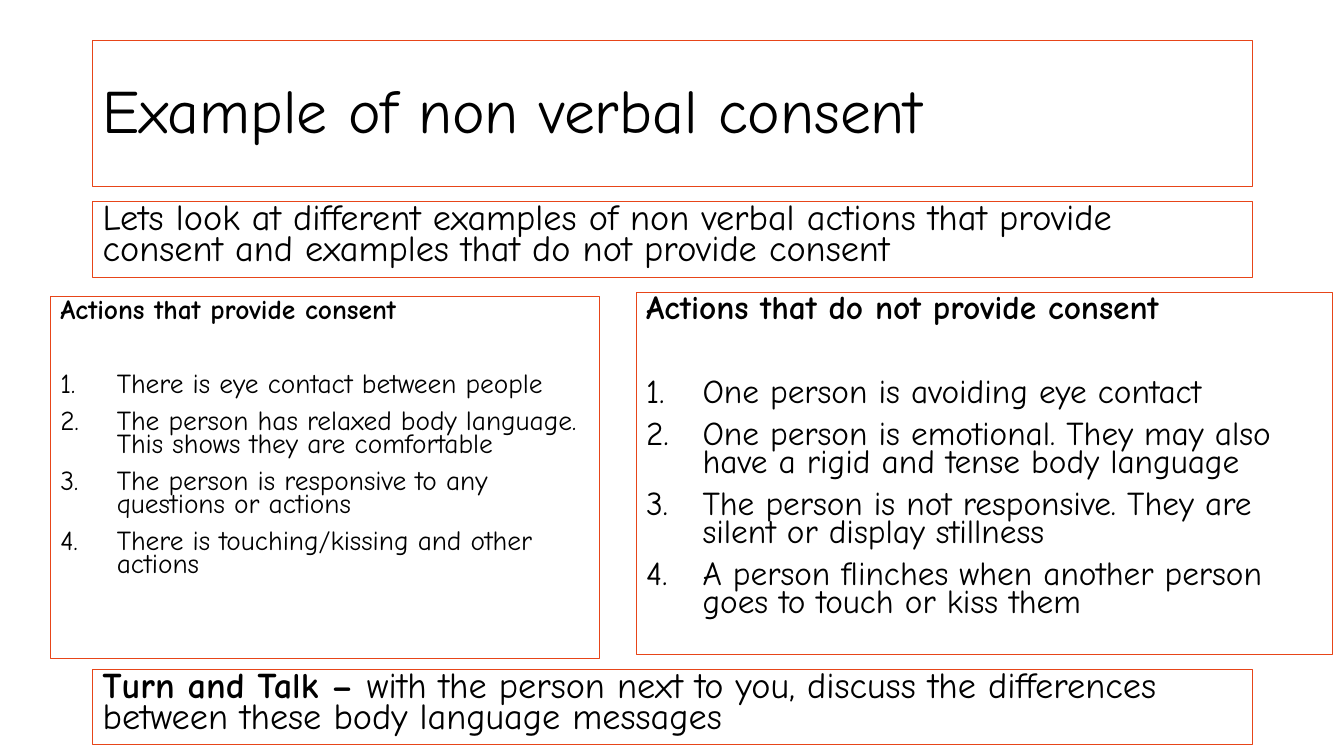
from pptx import Presentation
from pptx.dml.color import RGBColor
from pptx.enum.shapes import MSO_SHAPE as Shape
from pptx.enum.text import MSO_ANCHOR as Anchor, PP_ALIGN as Align
from pptx.util import Inches, Pt
from lxml import etree

FONT = "Comic Neue"
INK, EDGE = "000000", "E74519"
LEFT, WIDTH = 0.92, 11.5
GAP = 10
A = "{http://schemas.openxmlformats.org/drawingml/2006/main}"


def color(code):
    return RGBColor.from_string(code)


def frame(slide, box, anchor=Anchor.TOP):
    """Draw an outlined box and return its text frame."""
    shape = slide.shapes.add_shape(Shape.RECTANGLE, *map(Inches, box))
    shape.shadow.inherit = False
    shape.fill.background()
    shape.line.color.rgb = color(EDGE)
    shape.line.width = Pt(0.75)
    text = shape.text_frame
    text.word_wrap = True
    text.vertical_anchor = anchor
    return text


def write(para, runs, size, before=GAP, space=0.7):
    """Fill a paragraph with (words, bold) runs."""
    para.alignment = Align.LEFT
    para.line_spacing = space
    para.space_before = Pt(before)
    for words, bold in runs:
        run = para.add_run()
        run.text = words
        run.font.name = FONT
        run.font.size = Pt(size)
        run.font.bold = bold
        run.font.color.rgb = color(INK)


def number(para):
    """Turn a paragraph into a numbered item with a hanging indent."""
    props = para._p.get_or_add_pPr()
    indent = Inches(0.56)
    props.set("marL", str(indent))
    props.set("indent", str(-indent))
    etree.SubElement(props, A + "buFont", typeface=FONT)
    etree.SubElement(props, A + "buAutoNum", type="arabicPeriod")


def title(slide, box, words):
    text = frame(slide, box, Anchor.MIDDLE)
    write(text.paragraphs[0], [(words, False)], 44, 0, 0.9)


def note(slide, box, runs):
    write(frame(slide, box).paragraphs[0], runs, 25.9)


def actions(slide, box, head, items, size):
    """Place a bold heading and, one line below it, a numbered list."""
    text = frame(slide, box)
    write(text.paragraphs[0], [(head, True)], size)
    skip = 2 * GAP + 0.84 * size
    for i, item in enumerate(items):
        para = text.add_paragraph()
        write(para, [(item, False)], size, GAP if i else skip)
        number(para)


def main():
    deck = Presentation()
    deck.slide_width, deck.slide_height = Inches(13.33), Inches(7.5)
    slide = deck.slides.add_slide(deck.slide_layouts[6])
    title(slide, (LEFT, 0.4, WIDTH, 1.45), "Example of non verbal consent")
    note(slide, (LEFT, 2, WIDTH, 0.75), [
        ("Lets look at different examples of non verbal actions that provide "
         "consent and examples that do not provide consent", False)])
    actions(slide, (0.5, 2.94, 5.45, 3.59), "Actions that provide consent", [
        "There is eye contact between people",
        "The person has relaxed body language. This shows they are comfortable",
        "The person is responsive to any questions or actions",
        "There is touching/kissing and other actions",
    ], 19.6)
    actions(slide, (6.31, 2.9, 6.91, 3.59), "Actions that do not provide consent", [
        "One person is avoiding eye contact",
        "One person is emotional. They may also have a rigid and tense body language",
        "The person is not responsive. They are silent or display stillness",
        "A person flinches when another person goes to touch or kiss them",
    ], 23.8)
    note(slide, (LEFT, 6.64, WIDTH, 0.75), [
        ("Turn and Talk – ", True),
        ("with the person next to you, discuss the differences "
         "between these body language messages", False)])
    deck.save("out.pptx")


if __name__ == "__main__":
    main()
